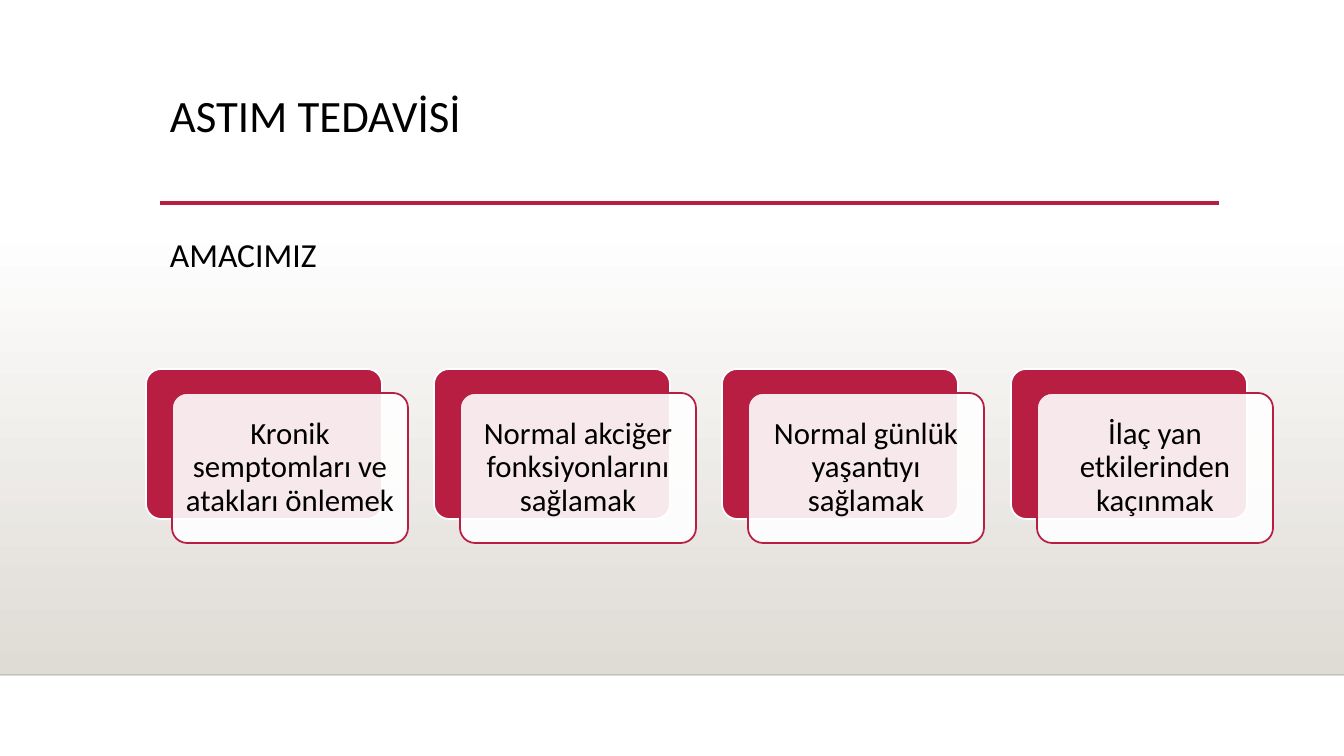
from lxml.etree import SubElement
from pptx import Presentation
from pptx.dml.color import RGBColor
from pptx.enum.shapes import MSO_CONNECTOR as CONN, MSO_SHAPE as SHAPE
from pptx.enum.text import MSO_ANCHOR as ANCHOR, PP_ALIGN as ALIGN
from pptx.oxml.ns import qn
from pptx.util import Emu, Pt

PX = 914400 / 100.8
COLORS = {
    "white": "FFFFFF",
    "sand": "DFDBD5",
    "crimson": "B71E42",
    "black": "000000",
}
GOALS = [
    "Kronik semptomları ve atakları önlemek",
    "Normal akciğer fonksiyonlarını sağlamak",
    "Normal günlük yaşantıyı sağlamak",
    "İlaç yan etkilerinden kaçınmak",
]


def px(n):
    return Emu(round(n * PX))


def rgb(name):
    return RGBColor.from_string(COLORS[name])


def set_alpha(fill_parent, percent):
    color = fill_parent.find(qn("a:solidFill"))[0]
    SubElement(color, qn("a:alpha"), val=str(percent * 1000))


def write(tf, text, size, align=ALIGN.LEFT, spacing=1.0):
    tf.word_wrap = True
    p = tf.paragraphs[0]
    p.text = text
    p.alignment = align
    p.line_spacing = spacing
    p.font.name = "Calibri"
    p.font.size = Pt(size)
    p.font.color.rgb = rgb("black")


def add_text(s, x, y, w, h, text, size, spacing=1.0):
    box = s.shapes.add_textbox(px(x), px(y), px(w), px(h))
    write(box.text_frame, text, size, spacing=spacing)


def add_rule(s, x1, x2, y, color, width, alpha=100):
    line = s.shapes.add_connector(CONN.STRAIGHT, px(x1), px(y), px(x2), px(y))
    line.line.color.rgb = rgb(color)
    line.line.width = Pt(width)
    sp_pr = line._element.spPr
    if alpha < 100:
        set_alpha(sp_pr.find(qn("a:ln")), alpha)
    SubElement(sp_pr, qn("a:effectLst"))


def add_backdrop(s):
    sp = s.shapes.add_shape(SHAPE.RECTANGLE, 0, px(223), px(1344), px(452))
    sp.shadow.inherit = False
    sp.line.fill.background()
    sp.fill.gradient()
    sp.fill.gradient_angle = 270
    for stop, color in zip(sp.fill.gradient_stops, ("white", "sand")):
        stop.color.rgb = rgb(color)


def add_panel(s, x, y, fill, border):
    sp = s.shapes.add_shape(SHAPE.ROUNDED_RECTANGLE, px(x), px(y), px(236), px(150))
    sp.adjustments[0] = 0.1
    sp.shadow.inherit = False
    sp.fill.solid()
    sp.fill.fore_color.rgb = rgb(fill)
    sp.line.color.rgb = rgb(border)
    sp.line.width = Pt(1.25)
    return sp


def add_goal(s, x, y, text):
    add_panel(s, x, y, "crimson", "white")
    front = add_panel(s, x + 26, y + 24, "white", "crimson")
    set_alpha(front._element.spPr, 90)
    tf = front.text_frame
    tf.margin_left = tf.margin_right = tf.margin_top = tf.margin_bottom = px(8)
    tf.vertical_anchor = ANCHOR.MIDDLE
    write(tf, text, 22, ALIGN.CENTER, 0.9)


def main():
    prs = Presentation()
    prs.slide_width, prs.slide_height = px(1344), px(756)
    s = prs.slides.add_slide(prs.slide_layouts[6])
    add_backdrop(s)
    add_rule(s, 0, 1344, 675, "black", 1, alpha=20)
    add_rule(s, 160, 1219, 203, "crimson", 2.5)
    add_text(s, 160, 89, 1058, 116, "ASTIM TEDAVİSİ", 32, spacing=0.9)
    for i, goal in enumerate(GOALS):
        add_goal(s, 146 + i * 865 // 3, 369, goal)
    add_text(s, 160, 229, 334, 50, "AMACIMIZ", 24)
    prs.save("out.pptx")


if __name__ == "__main__":
    main()
